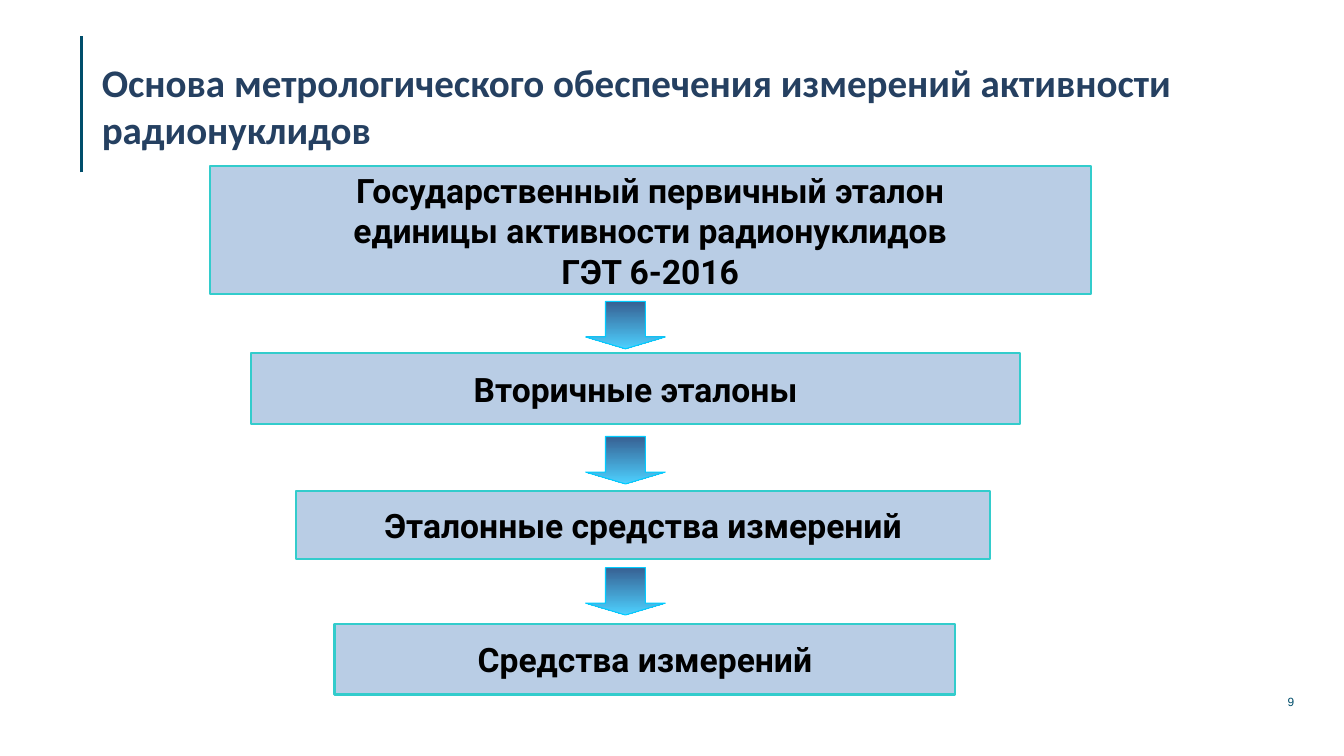
"""Build the slide on the measurement hierarchy for radionuclide activity."""
from dataclasses import dataclass

import pptx
import pptx.dml.color
import pptx.enum.shapes
import pptx.enum.text
import pptx.oxml
import pptx.oxml.ns
import pptx.shapes.autoshape
import pptx.slide
import pptx.util

Pt = pptx.util.Pt
RGBColor = pptx.dml.color.RGBColor
Shape = pptx.enum.shapes.MSO_SHAPE
Align = pptx.enum.text.PP_ALIGN
Anchor = pptx.enum.text.MSO_ANCHOR

TEAL = RGBColor(0x00, 0x4E, 0x6B)
NAVY = RGBColor(0x25, 0x40, 0x61)
BLACK = RGBColor(0x00, 0x00, 0x00)
PALE_BLUE = RGBColor(0xB9, 0xCD, 0xE5)
TURQUOISE = RGBColor(0x33, 0xCC, 0xCC)
ARROW_TOP = RGBColor(0x37, 0x60, 0x92)
ARROW_BOTTOM = RGBColor(0x4D, 0xD0, 0xFF)
ARROW_EDGE = RGBColor(0x00, 0xCC, 0xFF)

ARROW_LEFT, ARROW_WIDTH, ARROW_HEIGHT = 418.3, 56.9, 33.9


@dataclass(frozen=True)
class Level:
    """One level of the hierarchy, in points."""

    lines: tuple[str, ...]
    left: float
    top: float
    width: float
    height: float


LEVELS = (
    Level(("Государственный первичный эталон", "единицы активности радионуклидов",
           "ГЭТ 6-2016"), 149.8, 118.8, 629.3, 91.4),
    Level(("Вторичные эталоны",), 179.3, 252, 549.4, 51.1),
    Level(("Эталонные средства измерений",), 211.7, 350.6, 495.4, 49),
    Level(("Средства измерений",), 239, 445.7, 443.5, 50.4),
)
ARROW_TOPS = (215.3, 311.8, 405.4)


def write(frame: pptx.text.text.TextFrame, *lines: str, size: float, font: str,
          color: RGBColor, bold: bool = False, align: Align = Align.LEFT,
          wrap: bool = False) -> None:
    """Fill a text frame with formatted paragraphs, one per line."""
    frame.word_wrap = wrap
    frame.vertical_anchor = Anchor.MIDDLE
    frame.margin_left = frame.margin_right = 0
    frame.margin_top = frame.margin_bottom = 0
    for index, line in enumerate(lines):
        paragraph = frame.add_paragraph() if index else frame.paragraphs[0]
        paragraph.alignment = align
        run = paragraph.add_run()
        run.text = line
        run.font.size = Pt(size)
        run.font.name = font
        run.font.bold = bold
        run.font.color.rgb = color


def add_level(slide: pptx.slide.Slide, level: Level) -> None:
    """Draw the labelled box of one level."""
    box = slide.shapes.add_shape(Shape.RECTANGLE, Pt(level.left), Pt(level.top),
                                 Pt(level.width), Pt(level.height))
    box.shadow.inherit = False
    box.fill.solid()
    box.fill.fore_color.rgb = PALE_BLUE
    box.line.color.rgb = TURQUOISE
    box.line.width = Pt(1.5)
    write(box.text_frame, *level.lines, size=24, font="Roboto", color=BLACK,
          bold=True, align=Align.CENTER)


def add_arrow(slide: pptx.slide.Slide, top: float) -> None:
    """Draw a gradient arrow leading down to the next level."""
    arrow = slide.shapes.add_shape(Shape.DOWN_ARROW, Pt(ARROW_LEFT), Pt(top),
                                   Pt(ARROW_WIDTH), Pt(ARROW_HEIGHT))
    arrow.shadow.inherit = False
    arrow.adjustments[0] = 0.5
    arrow.adjustments[1] = 0.25
    arrow.fill.gradient()
    arrow.fill.gradient_angle = 270
    for stop, color in zip(arrow.fill.gradient_stops, (ARROW_TOP, ARROW_BOTTOM)):
        stop.color.rgb = color
    arrow.line.color.rgb = ARROW_EDGE
    arrow.line.width = Pt(0.75)


def add_title(slide: pptx.slide.Slide) -> None:
    """Draw the title and the rule on its left."""
    rule = slide.shapes.add_connector(pptx.enum.shapes.MSO_CONNECTOR.STRAIGHT,
                                      Pt(58.3), Pt(123.1), Pt(58.3), Pt(25.9))
    rule.line.color.rgb = TEAL
    rule.line.width = Pt(1.65)
    properties = rule.element.find(pptx.oxml.ns.qn("p:spPr"))
    properties.append(pptx.oxml.parse_xml(
        f"<a:effectLst {pptx.oxml.ns.nsdecls('a')}/>"))
    title = slide.shapes.add_textbox(Pt(72.7), Pt(41), Pt(805), Pt(68))
    write(title.text_frame,
          "Основа метрологического обеспечения измерений активности радионуклидов",
          size=27.9, font="Calibri", color=NAVY, bold=True, wrap=True)


def main() -> None:
    """Assemble and save the slide."""
    deck = pptx.Presentation()
    deck.slide_width, deck.slide_height = Pt(960), Pt(540)
    slide = deck.slides.add_slide(deck.slide_layouts[6])
    add_title(slide)
    for level in LEVELS:
        add_level(slide, level)
    for top in ARROW_TOPS:
        add_arrow(slide, top)
    page_number = slide.shapes.add_textbox(Pt(913), Pt(496.1), Pt(11.5), Pt(10.1))
    write(page_number.text_frame, "9", size=8.5, font="Arial", color=TEAL,
          align=Align.RIGHT, wrap=True)
    deck.save("out.pptx")


if __name__ == "__main__":
    main()
